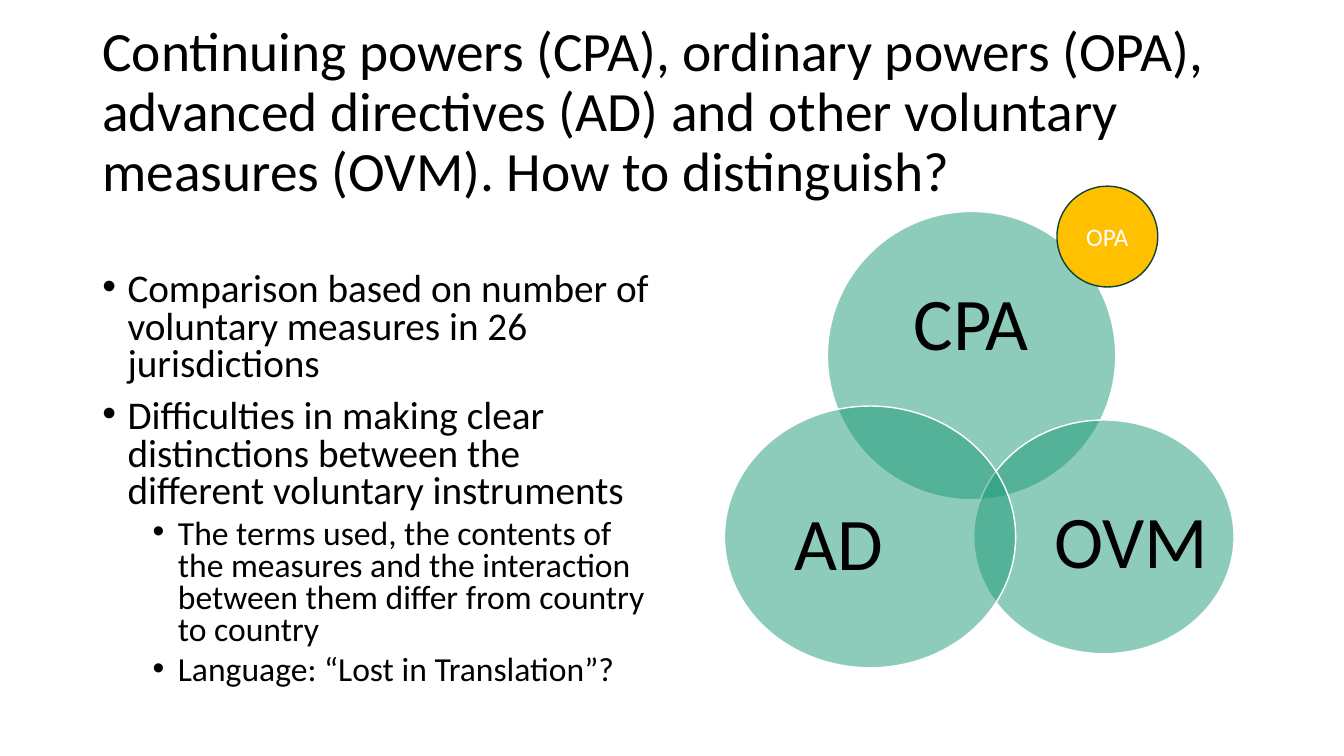
from lxml import etree
from pptx import Presentation
from pptx.dml.color import RGBColor
from pptx.enum.shapes import MSO_SHAPE
from pptx.enum.text import MSO_ANCHOR, PP_ALIGN
from pptx.oxml.ns import qn
from pptx.util import Pt

FONT = "Calibri"
COLORS = {"text": "000000", "circle": "1D9A78", "white": "FFFFFF",
          "accent": "FFC000", "accent_line": "0D4335"}

TITLE = ("Continuing powers (CPA), ordinary powers (OPA), advanced directives (AD) "
         "and other voluntary measures (OVM). How to distinguish?")

# Text and level
BULLETS = [
    ("Comparison based on number of voluntary measures in 26 jurisdictions", 0),
    ("Difficulties in making clear distinctions between the different voluntary instruments", 0),
    ("The terms used, the contents of the measures and the interaction between them "
     "differ from country to country", 1),
    ("Language: “Lost in Translation”?", 1),
]
# Size, space before and left margin in points for each level
LEVELS = [(28, 10, 18), (24, 5, 54)]

# Label, circle box and label box (left, top, width, height in points)
VENN = [
    ("CPA", (591, 151, 206, 206), (618.5, 187, 150.5, 92)),
    ("OVM", (695.5, 300, 186, 167), (752.5, 343, 111.5, 92)),
    ("AD", (517.5, 290, 208, 187), (537, 339, 124.5, 103)),
]


def rgb(name):
    return RGBColor.from_string(COLORS[name])


def write(paragraph, text, size, color="text", align=PP_ALIGN.LEFT, spacing=1.0, before=0):
    paragraph.alignment = align
    paragraph.line_spacing = spacing
    paragraph.space_before = Pt(before)
    run = paragraph.add_run()
    run.text = text
    run.font.name = FONT
    run.font.size = Pt(size)
    run.font.color.rgb = rgb(color)


def add_frame(slide, box, anchor=MSO_ANCHOR.MIDDLE, inset=None):
    frame = slide.shapes.add_textbox(*map(Pt, box)).text_frame
    frame.word_wrap = True
    frame.vertical_anchor = anchor
    if inset is not None:
        frame.margin_left = frame.margin_right = Pt(inset)
        frame.margin_top = frame.margin_bottom = Pt(inset)
    return frame


def set_bullet(paragraph, margin):
    """Give the paragraph a bullet hanging 18 points left of its margin."""
    properties = paragraph._p.get_or_add_pPr()
    properties.set("marL", str(Pt(margin)))
    properties.set("indent", str(-Pt(18)))
    etree.SubElement(properties, qn("a:buFont")).set("typeface", "Arial")
    etree.SubElement(properties, qn("a:buChar")).set("char", "•")


def add_bullets(slide, box, bullets):
    frame = add_frame(slide, box, anchor=MSO_ANCHOR.TOP)
    for index, (text, level) in enumerate(bullets):
        paragraph = frame.add_paragraph() if index else frame.paragraphs[0]
        size, before, margin = LEVELS[level]
        paragraph.level = level
        set_bullet(paragraph, margin)
        write(paragraph, text, size, spacing=0.8, before=before if index else 0)


def add_circle(slide, box, fill, line, opacity=100):
    shape = slide.shapes.add_shape(MSO_SHAPE.OVAL, *map(Pt, box))
    shape.shadow.inherit = False
    shape.fill.solid()
    shape.fill.fore_color.rgb = rgb(fill)
    shape.line.color.rgb = rgb(line)
    shape.line.width = Pt(1)
    if opacity < 100:
        color = shape._element.spPr.find(qn("a:solidFill"))[0]
        etree.SubElement(color, qn("a:alpha")).set("val", str(opacity * 1000))
    return shape


def add_venn(slide):
    for label, circle_box, label_box in VENN:
        add_circle(slide, circle_box, "circle", "white", opacity=50)
        frame = add_frame(slide, label_box, inset=0)
        write(frame.paragraphs[0], label, 53, align=PP_ALIGN.CENTER, spacing=0.9)


def add_badge(slide, box, label):
    frame = add_circle(slide, box, "accent", "accent_line").text_frame
    frame.vertical_anchor = MSO_ANCHOR.MIDDLE
    write(frame.paragraphs[0], label, 18, color="white", align=PP_ALIGN.CENTER)


def main():
    presentation = Presentation()
    presentation.slide_width = Pt(960)
    presentation.slide_height = Pt(540)
    slide = presentation.slides.add_slide(presentation.slide_layouts[6])

    title = add_frame(slide, (66, 29, 828, 104))
    write(title.paragraphs[0], TITLE, 39.6, spacing=0.9)
    add_bullets(slide, (66, 191, 408, 296), BULLETS)
    add_venn(slide)
    add_badge(slide, (755, 133, 72, 72), "OPA")

    presentation.save("out.pptx")


if __name__ == "__main__":
    main()
